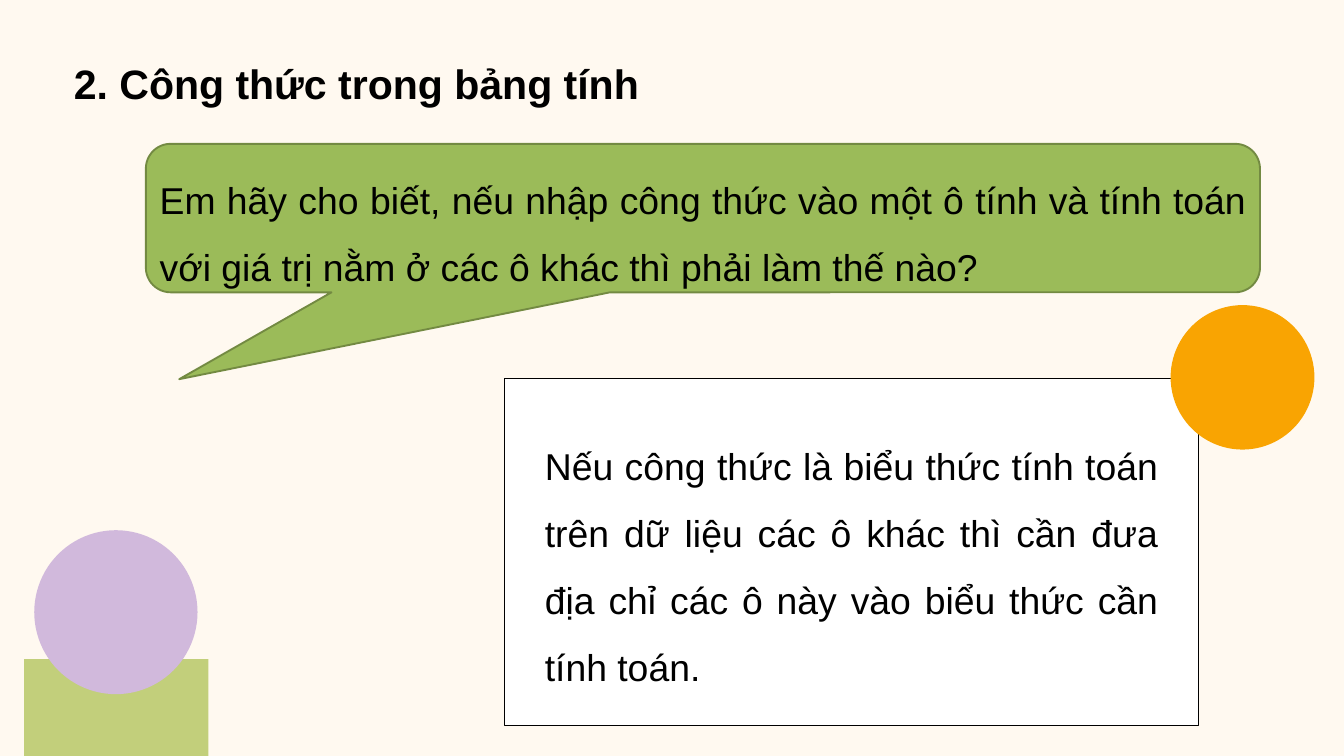
from dataclasses import dataclass

from pptx import Presentation
from pptx.dml.color import RGBColor
from pptx.enum.shapes import MSO_SHAPE
from pptx.enum.text import MSO_ANCHOR, MSO_AUTO_SIZE, PP_ALIGN
from pptx.shapes.autoshape import Shape
from pptx.slide import Slide
from pptx.util import Inches, Pt

RECTANGLE = MSO_SHAPE.RECTANGLE
OVAL = MSO_SHAPE.OVAL
CALLOUT = MSO_SHAPE.ROUNDED_RECTANGULAR_CALLOUT
JUSTIFY = PP_ALIGN.JUSTIFY
TOP = MSO_ANCHOR.TOP
FIT_SHAPE = MSO_AUTO_SIZE.SHAPE_TO_FIT_TEXT

FONT = "Arial"
BLACK = "000000"


@dataclass(frozen=True)
class Box:
    left: float
    top: float
    width: float
    height: float

    def lengths(self) -> tuple[Inches, ...]:
        return tuple(Inches(v) for v in (self.left, self.top, self.width, self.height))


@dataclass(frozen=True)
class Figure:
    preset: MSO_SHAPE
    box: Box
    fill: str
    line: str | None = None
    line_width: float = 1


ANSWER_CARD = Figure(RECTANGLE, Box(7.51, 5.63, 10.32, 5.17), "FFFFFF", BLACK)
DECORATIONS = (
    Figure(RECTANGLE, Box(0.36, 9.81, 2.74, 1.44), "C2CF7B"),
    Figure(OVAL, Box(17.42, 4.54, 2.14, 2.15), "F9A402"),
    Figure(OVAL, Box(0.51, 7.89, 2.43, 2.44), "D1B9DC"),
)
QUESTION_BUBBLE = Figure(CALLOUT, Box(2.17, 2.14, 16.58, 2.21), "9BBB59", "738A42", 2)
BUBBLE_ADJUSTMENTS = (-0.47, 1.085, 0.167)

HEADING = "2. Công thức trong bảng tính"
QUESTION = (
    "Em hãy cho biết, nếu nhập công thức vào một ô tính và tính toán "
    "với giá trị nằm ở các ô khác thì phải làm thế nào?"
)
ANSWER = (
    "Nếu công thức là biểu thức tính toán trên dữ liệu các ô khác thì cần đưa "
    "địa chỉ các ô này vào biểu thức cần tính toán."
)


def color(value: str) -> RGBColor:
    return RGBColor.from_string(value)


def draw_figure(slide: Slide, figure: Figure) -> Shape:
    shape = slide.shapes.add_shape(figure.preset, *figure.box.lengths())
    shape.shadow.inherit = False
    shape.fill.solid()
    shape.fill.fore_color.rgb = color(figure.fill)
    if figure.line:
        shape.line.color.rgb = color(figure.line)
        shape.line.width = Pt(figure.line_width)
    else:
        shape.line.fill.background()
    return shape


def write_text(shape: Shape, text: str, size: float = 40, bold: bool = False) -> None:
    frame = shape.text_frame
    frame.word_wrap = True
    frame.auto_size = FIT_SHAPE
    frame.vertical_anchor = TOP
    paragraph = frame.paragraphs[0]
    paragraph.text = text
    paragraph.alignment = JUSTIFY
    paragraph.line_spacing = 1.5
    paragraph.font.name = FONT
    paragraph.font.size = Pt(size)
    paragraph.font.bold = bold
    paragraph.font.color.rgb = color(BLACK)


def main() -> None:
    presentation = Presentation()
    presentation.slide_width = Inches(20)
    presentation.slide_height = Inches(11.25)
    slide = presentation.slides.add_slide(presentation.slide_layouts[6])
    slide.background.fill.solid()
    slide.background.fill.fore_color.rgb = color("FFF9F0")

    for figure in (ANSWER_CARD, *DECORATIONS):
        draw_figure(slide, figure)

    heading = slide.shapes.add_textbox(*Box(1, 0.38, 10, 1.07).lengths())
    write_text(heading, HEADING, size=44, bold=True)
    heading.text_frame.margin_top = Inches(0.13)

    bubble = draw_figure(slide, QUESTION_BUBBLE)
    for index, value in enumerate(BUBBLE_ADJUSTMENTS):
        bubble.adjustments[index] = value
    write_text(bubble, QUESTION)

    answer = slide.shapes.add_textbox(*Box(8.01, 6.21, 9.32, 4.02).lengths())
    write_text(answer, ANSWER)

    presentation.save("out.pptx")


if __name__ == "__main__":
    main()
